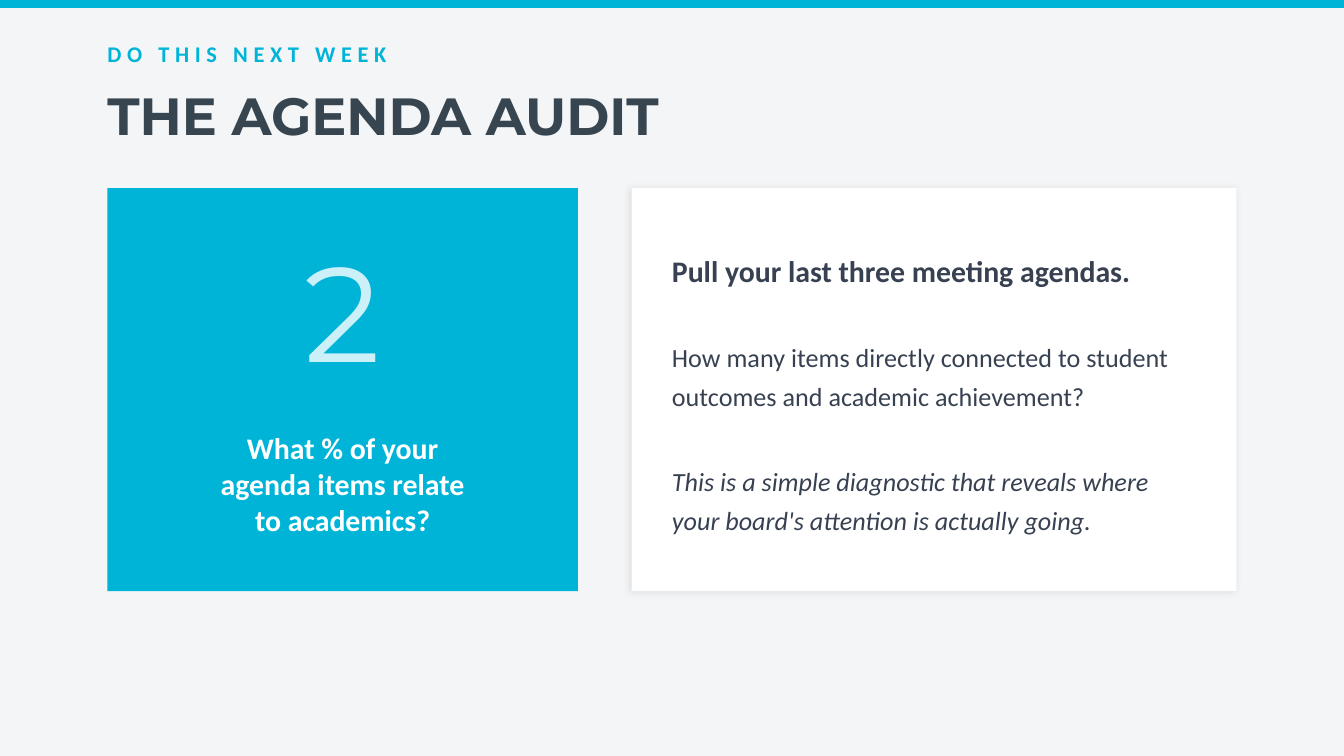
from lxml import etree
from pptx import Presentation
from pptx.dml.color import RGBColor
from pptx.enum.shapes import MSO_SHAPE
from pptx.enum.text import MSO_ANCHOR, PP_ALIGN
from pptx.oxml.ns import qn
from pptx.util import Emu, Pt

RECTANGLE = MSO_SHAPE.RECTANGLE
MIDDLE = MSO_ANCHOR.MIDDLE
LEFT, CENTER = PP_ALIGN.LEFT, PP_ALIGN.CENTER
PX = 4572
WIDTH, HEIGHT = 2000, 1125
CYAN, SLATE, INK = "00B4D8", "36454F", "374151"
WHITE, BLACK, PAPER = "FFFFFF", "000000", "F4F5F7"
BODY, DISPLAY = "Calibri", "Montserrat"


def px(*lengths):
    """Turn px lengths into EMU."""
    return [Emu(length * PX) for length in lengths]


def color(value):
    """Turn a hex string into a colour."""
    return RGBColor.from_string(value)


def add_panel(slide, box, fill):
    """Add a plain filled rectangle."""
    panel = slide.shapes.add_shape(RECTANGLE, *px(*box))
    panel.shadow.inherit = False
    panel.fill.solid()
    panel.fill.fore_color.rgb = color(fill)
    panel.line.fill.background()
    return panel


def add_soft_shadow(panel):
    """Give a panel a faint shadow towards its lower left."""
    effects = panel._element.spPr.find(qn("a:effectLst"))
    shadow = etree.SubElement(
        effects, qn("a:outerShdw"), blurRad=str(Pt(4)), dist=str(Pt(1)),
        dir=str(135 * 60000), algn="bl", rotWithShape="0")
    tint = etree.SubElement(shadow, qn("a:srgbClr"), val=BLACK)
    etree.SubElement(tint, qn("a:alpha"), val="10000")


def write(paragraph, text, size=14, font=BODY, fill=INK, bold=False,
          italic=False, align=LEFT, leading=None, before=None,
          tracking=None, opacity=None):
    """Write one formatted run into a paragraph."""
    paragraph.alignment = align
    if leading:
        paragraph.line_spacing = leading
    if before:
        paragraph.space_before = Pt(before)
    run = paragraph.add_run()
    run.text = text
    run.font.size = Pt(size)
    run.font.name = font
    run.font.bold = bold
    run.font.italic = italic
    run.font.color.rgb = color(fill)
    properties = run._r.get_or_add_rPr()
    if tracking:
        properties.set("spc", str(tracking * 100))
    if opacity:
        tint = properties.find(f"{qn('a:solidFill')}/{qn('a:srgbClr')}")
        etree.SubElement(tint, qn("a:alpha"), val=str(opacity * 1000))


def add_text(slide, box, *entries, **shared):
    """Add a text box with one paragraph per (text, format) entry."""
    frame = slide.shapes.add_textbox(*px(*box)).text_frame
    frame.word_wrap = True
    frame.vertical_anchor = MIDDLE
    frame.margin_left = frame.margin_right = 0
    frame.margin_top = frame.margin_bottom = 0
    for index, (text, details) in enumerate(entries):
        paragraph = frame.add_paragraph() if index else frame.paragraphs[0]
        write(paragraph, text, **shared, **details)


def add_header(slide, box):
    """Place the kicker above the title."""
    left, top, width, _ = box
    add_text(slide, (left, top, 600, 80), ("DO THIS NEXT WEEK", {}),
             size=12, fill=CYAN, bold=True, tracking=3)
    add_text(slide, (left, top + 70, width, 120), ("THE AGENDA AUDIT", {}),
             size=28, font=DISPLAY, fill=SLATE, bold=True)


def add_question_card(slide, box):
    """Place the numbered question on a cyan card."""
    left, top, width, _ = box
    add_panel(slide, box, CYAN)
    add_text(slide, (left, top + 20, width, 320), ("2", {}),
             size=72, font=DISPLAY, fill=WHITE, align=CENTER, opacity=80)
    lines = ("What % of your", "agenda items relate", "to academics?")
    add_text(slide, (left + 40, top + 320, width - 80, 240),
             *((line, {}) for line in lines),
             size=16, fill=WHITE, bold=True, align=CENTER)


def add_instruction_card(slide, box):
    """Place the audit instructions on a white card."""
    left, top, width, height = box
    add_soft_shadow(add_panel(slide, box, WHITE))
    pad = 60
    add_text(
        slide, (left + pad, top + pad, width - 2 * pad, height - 2 * pad),
        ("Pull your last three meeting agendas.", {"size": 16, "bold": True}),
        ("How many items directly connected to student outcomes and "
         "academic achievement?", {"before": 24.4}),
        ("This is a simple diagnostic that reveals where your board's "
         "attention is actually going.", {"before": 24.4, "italic": True}),
        leading=1.25)


def main():
    """Build the slide and save it."""
    deck = Presentation()
    deck.slide_width, deck.slide_height = px(WIDTH, HEIGHT)
    slide = deck.slides.add_slide(deck.slide_layouts[6])
    slide.background.fill.solid()
    slide.background.fill.fore_color.rgb = color(PAPER)
    margin, gap, card_top, card_height = 160, 80, 280, 600
    content = WIDTH - 2 * margin
    question = 700
    add_panel(slide, (0, 0, WIDTH, 12), CYAN)
    add_header(slide, (margin, 40, content, 190))
    add_question_card(slide, (margin, card_top, question, card_height))
    add_instruction_card(slide, (margin + question + gap, card_top,
                                 content - question - gap, card_height))
    deck.save("out.pptx")


if __name__ == "__main__":
    main()
